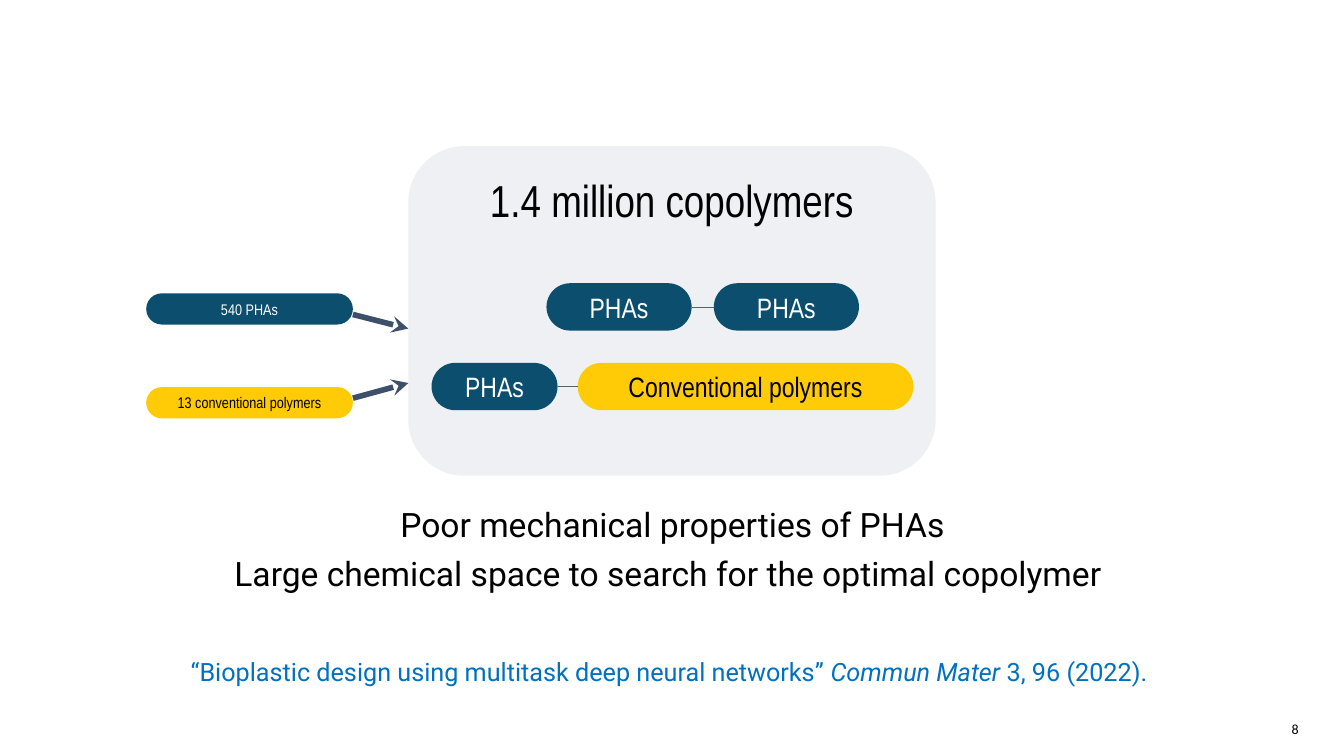
"""Build the slide on the copolymer search space of PHAs."""
from lxml import etree
from pptx import Presentation
from pptx.dml.color import RGBColor
from pptx.enum.shapes import MSO_CONNECTOR, MSO_SHAPE
from pptx.enum.text import MSO_ANCHOR, PP_ALIGN
from pptx.oxml.ns import qn
from pptx.util import Inches, Pt

COLORS = {
    "teal": "0B4E6E", "yellow": "FFCA06", "panel": "EEF0F4", "link": "526661",
    "arrow": "3D4F69", "citation": "0070C0", "black": "000000", "white": "FFFFFF",
}
NARROW, ROBOTO = "Arial Narrow", "Roboto"

SOURCE_LEFT, SOURCE_WIDTH, SOURCE_HEIGHT = 1.45, 2.05, 0.31
SOURCES = [
    ("540 PHAs", 2.91, "teal", "white", 3.12, 3.26),
    ("13 conventional polymers", 3.84, "yellow", "black", 3.95, 3.8),
]
PANEL_TITLE, PANEL_PLACE = "1.4 million copolymers", (4.05, 1.45, 5.23, 3.27)
UNIT_HEIGHT = 0.47
COPOLYMERS = [
    (2.81, [("PHAs", 5.42, 1.44, "teal", "white"),
            ("PHAs", 7.08, 1.44, "teal", "white")]),
    (3.6, [("PHAs", 4.28, 1.25, "teal", "white"),
           ("Conventional polymers", 5.73, 3.33, "yellow", "black")]),
]
STATEMENTS = [
    ((3.86, 4.95, 5.62, 0.5), [("Poor mechanical properties of PHAs", False)], 24, "black"),
    ((2.15, 5.44, 8.95, 0.5),
     [("Large chemical space to search for the optimal copolymer", False)], 24, "black"),
    ((1.5, 6.46, 10.27, 0.4),
     [("“Bioplastic design using multitask deep neural networks” ", False),
      ("Commun Mater", True), (" 3, 96 (2022).", False)], 18, "citation"),
]
PAGE_NUMBER, NUMBER_PLACE = "8", (12.61, 7.12, 0.47, 0.23)


def rgb(name):
    return RGBColor.from_string(COLORS[name])


def write(shape, spans, size, font, color, anchor=MSO_ANCHOR.MIDDLE,
          margins=(0.1, 0.05, 0.1, 0.05), wrap=False):
    frame = shape.text_frame
    frame.word_wrap = wrap
    frame.vertical_anchor = anchor
    (frame.margin_left, frame.margin_top,
     frame.margin_right, frame.margin_bottom) = map(Inches, margins)
    para = frame.paragraphs[0]
    para.alignment = PP_ALIGN.CENTER
    for text, italic in spans:
        span = para.add_run()
        span.text = text
        span.font.size = Pt(size)
        span.font.name = font
        span.font.italic = italic
        span.font.color.rgb = rgb(color)


def add_rounded(page, place, fill, roundness=0.5):
    shape = page.shapes.add_shape(MSO_SHAPE.ROUNDED_RECTANGLE, *map(Inches, place))
    shape.adjustments[0] = roundness
    shape.shadow.inherit = False
    shape.fill.solid()
    shape.fill.fore_color.rgb = rgb(fill)
    shape.line.fill.background()
    return shape


def add_line(page, ends, color, width, arrow=False):
    line = page.shapes.add_connector(MSO_CONNECTOR.STRAIGHT, *map(Inches, ends))
    line.line.color.rgb = rgb(color)
    line.line.width = Pt(width)
    if arrow:
        outline = line.line._get_or_add_ln()
        etree.SubElement(outline, qn("a:tailEnd"), type="stealth")
    etree.SubElement(line._element.spPr, qn("a:effectLst"))


def add_sources(page):
    for text, top, fill, color, start, end in SOURCES:
        place = (SOURCE_LEFT, top, SOURCE_WIDTH, SOURCE_HEIGHT)
        write(add_rounded(page, place, fill), [(text, False)], 11, NARROW, color)
        add_line(page, (SOURCE_LEFT + SOURCE_WIDTH, start, PANEL_PLACE[0], end),
                 "arrow", 4, arrow=True)


def add_panel(page):
    panel = add_rounded(page, PANEL_PLACE, "panel", 0.17)
    write(panel, [(PANEL_TITLE, False)], 32, NARROW, "black",
          MSO_ANCHOR.TOP, (0.1, 0.1, 0.1, 0.05))
    for top, units in COPOLYMERS:
        for text, left, width, fill, color in units:
            unit = add_rounded(page, (left, top, width, UNIT_HEIGHT), fill)
            write(unit, [(text, False)], 20, NARROW, color,
                  margins=(0.06, 0, 0.06, 0), wrap=True)
        first, second = units
        middle = top + UNIT_HEIGHT / 2
        add_line(page, (first[1] + first[2], middle, second[1], middle), "link", 0.5)


def add_texts(page):
    for place, spans, size, color in STATEMENTS:
        box = page.shapes.add_textbox(*map(Inches, place))
        write(box, spans, size, ROBOTO, color, MSO_ANCHOR.TOP)
    number = page.shapes.add_textbox(*map(Inches, NUMBER_PLACE))
    write(number, [(PAGE_NUMBER, False)], 10, "Calibri", "black", margins=(0, 0, 0, 0))


def main():
    deck = Presentation()
    deck.slide_width, deck.slide_height = Inches(13.33), Inches(7.5)
    page = deck.slides.add_slide(deck.slide_layouts[6])
    add_panel(page)
    add_sources(page)
    add_texts(page)
    deck.save("out.pptx")


if __name__ == "__main__":
    main()
